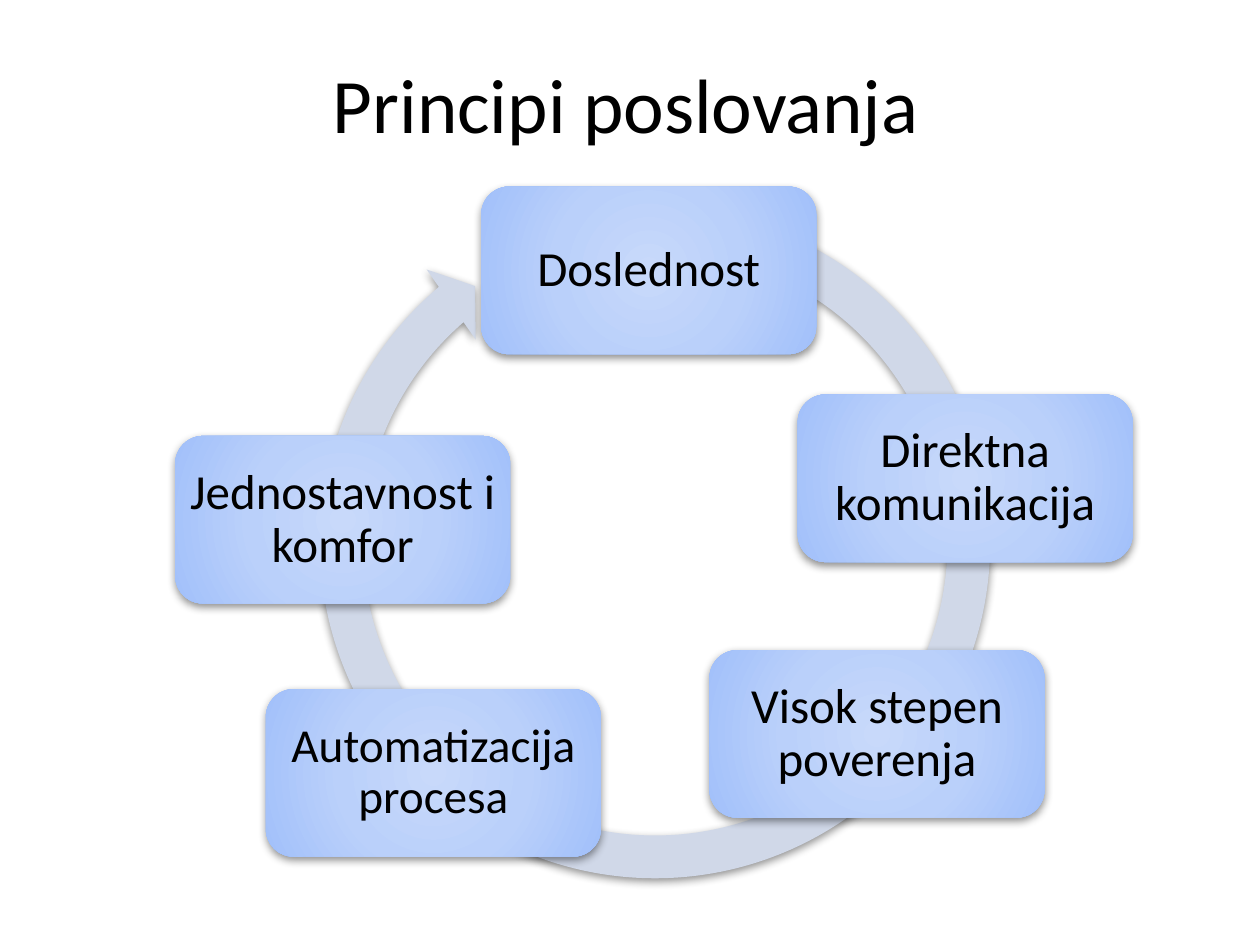
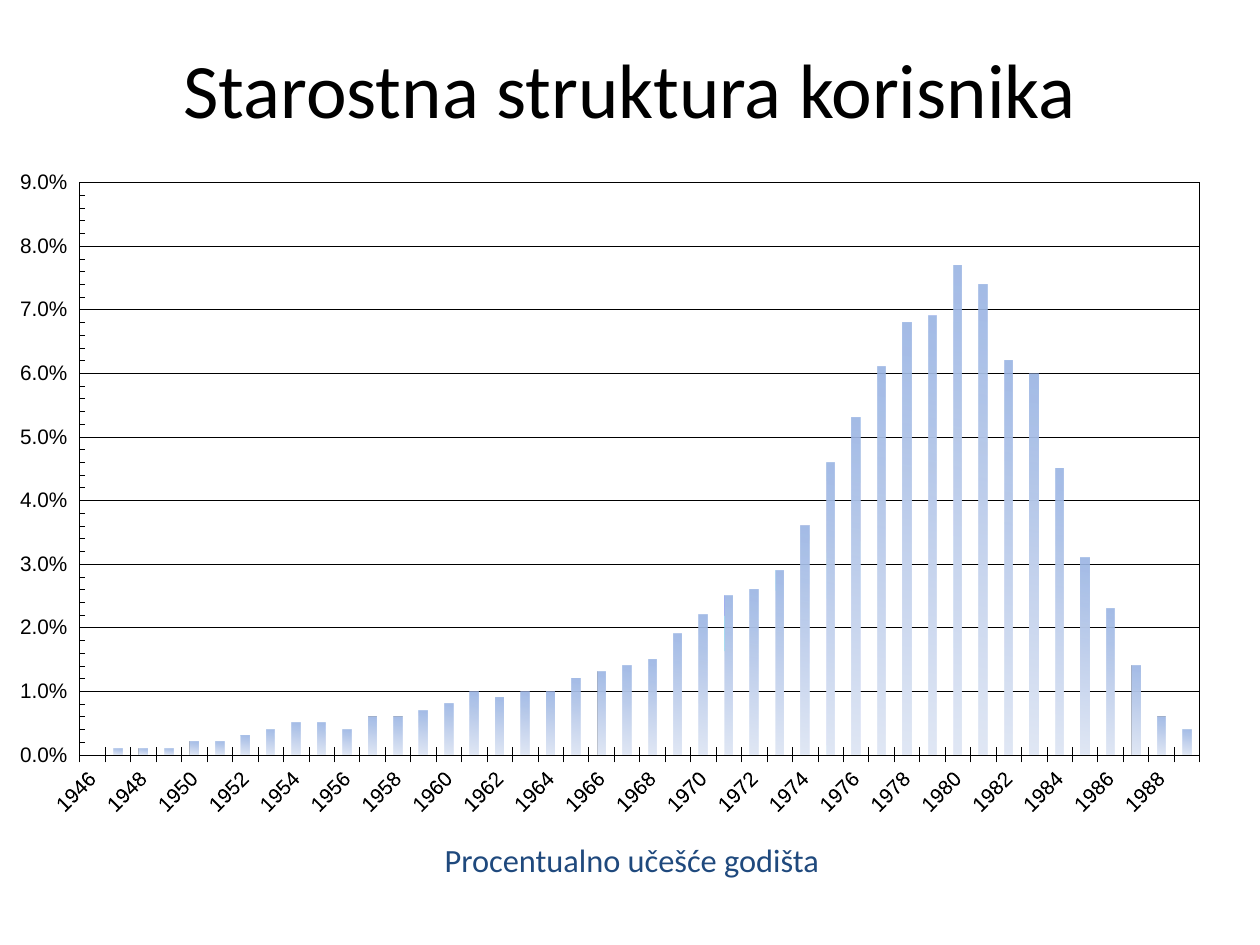
from dataclasses import dataclass

from pptx import Presentation
from pptx.chart.data import CategoryChartData
from pptx.dml.color import RGBColor
from pptx.enum.chart import XL_AXIS_CROSSES, XL_CHART_TYPE, XL_TICK_LABEL_POSITION, XL_TICK_MARK
from pptx.enum.shapes import MSO_SHAPE
from pptx.enum.text import MSO_ANCHOR, MSO_AUTO_SIZE, PP_ALIGN
from pptx.oxml import parse_xml
from pptx.oxml.ns import nsdecls, qn
from pptx.util import Pt

COLUMNS = XL_CHART_TYPE.COLUMN_CLUSTERED
AXIS_AT_MAXIMUM = XL_AXIS_CROSSES.MAXIMUM
LABELS_LOW = XL_TICK_LABEL_POSITION.LOW
TICK_CROSS, TICK_INSIDE = XL_TICK_MARK.CROSS, XL_TICK_MARK.INSIDE
ROUNDED, CIRCULAR_ARROW = MSO_SHAPE.ROUNDED_RECTANGLE, MSO_SHAPE.CIRCULAR_ARROW
TOP, MIDDLE = MSO_ANCHOR.TOP, MSO_ANCHOR.MIDDLE
CENTER = PP_ALIGN.CENTER
NO_AUTOFIT = MSO_AUTO_SIZE.NONE

BLACK, NAVY, RING = "000000", "1F497D", "D0D8E8"
TEXT_FONT, CHART_FONT = "Calibri", "Arial"
TITLE_ONLY = 5
HAIRLINE = 0.25

NODE_STOPS = [(0, "C8D9FA", 100), (50, "BAD0FA", 100), (97, "A3C1FA", 100), (100, "99BCFD", 100)]
NODE_DIRECTION = '<a:path path="circle"><a:fillToRect l="50000" t="50000" r="50000" b="50000"/></a:path>'
BAR_STOPS = [(0, "9AB5E4", 90), (50, "C2D1ED", 100), (100, "E1E8F5", 100)]
BAR_DIRECTION = '<a:lin ang="6000000" scaled="0"/>'


@dataclass(frozen=True)
class Box:
    left: float
    top: float
    width: float
    height: float

    def lengths(self) -> tuple:
        return Pt(self.left), Pt(self.top), Pt(self.width), Pt(self.height)


@dataclass(frozen=True)
class Principle:
    text: str
    left: float
    top: float
    size: float = 28


NODE_WIDTH, NODE_HEIGHT = 191.5, 95.8
RING_BOX = Box(170.6, 106.6, 407.5, 407.5)
RING_ADJUSTMENTS = (0.06, 3.31, 137.69, 173.9, 0.06)
PRINCIPLES = [
    Principle("Doslednost", 275, 106.6),
    Principle("Direktna komunikacija", 455.8, 225.4),
    Principle("Visok stepen poverenja", 405.4, 371.5),
    Principle("Automatizacija procesa", 151.9, 393.8, 27),
    Principle("Jednostavnost i komfor", 100.1, 249.1),
]

FIRST_YEAR = 1946
SHARES = [
    0, 0.001, 0.001, 0.001, 0.002, 0.002, 0.003, 0.004, 0.005, 0.005, 0.004,
    0.006, 0.006, 0.007, 0.008, 0.01, 0.009, 0.01, 0.01, 0.012, 0.013, 0.014,
    0.015, 0.019, 0.022, 0.025, 0.026, 0.029, 0.036, 0.046, 0.053, 0.061,
    0.068, 0.069, 0.077, 0.074, 0.062, 0.06, 0.045, 0.031, 0.023, 0.014,
    0.006, 0.004,
]
PLOT_LAYOUT = {"x": 0.038, "y": 0.077, "w": 0.944, "h": 0.814}


def rgb(hex_color: str) -> RGBColor:
    return RGBColor.from_string(hex_color)


def apply_format(target, values: dict) -> None:
    for name, value in values.items():
        setattr(target, name, value)


def style_font(font, name: str, size: float, color: str) -> None:
    apply_format(font, {"name": name, "size": Pt(size)})
    font.color.rgb = rgb(color)


def style_line(line) -> None:
    line.width = Pt(HAIRLINE)
    line.color.rgb = rgb(BLACK)


def fill_gradient(fill, element, stops: list, direction: str) -> None:
    fill.gradient()
    placed = element.find(".//" + qn("a:gradFill"))
    stop_xml = "".join(
        f'<a:gs pos="{position * 1000}"><a:srgbClr val="{color}">'
        f'<a:alpha val="{opacity * 1000}"/></a:srgbClr></a:gs>'
        for position, color, opacity in stops
    )
    gradient = parse_xml(
        f'<a:gradFill {nsdecls("a")} rotWithShape="1"><a:gsLst>{stop_xml}</a:gsLst>{direction}</a:gradFill>'
    )
    placed.getparent().replace(placed, gradient)


def add_soft_shadow(shape) -> None:
    shape.shadow.inherit = False
    effects = shape._element.spPr.find(qn("a:effectLst"))
    effects.append(parse_xml(
        f'<a:outerShdw {nsdecls("a")} blurRad="{Pt(5)}" dist="{Pt(2)}" dir="5400000" rotWithShape="0">'
        f'<a:srgbClr val="{BLACK}"><a:alpha val="43000"/></a:srgbClr></a:outerShdw>'
    ))


def write_text(shape, text: str, size: float, color: str = BLACK, anchor=MIDDLE, **paragraph_values) -> None:
    frame = shape.text_frame
    apply_format(frame, {"word_wrap": True, "auto_size": NO_AUTOFIT, "vertical_anchor": anchor})
    paragraph = frame.paragraphs[0]
    apply_format(paragraph, {"text": text, "alignment": CENTER, **paragraph_values})
    style_font(paragraph.runs[0].font, TEXT_FONT, size, color)


def add_titled_slide(presentation, title: str, box: Box):
    slide = presentation.slides.add_slide(presentation.slide_layouts[TITLE_ONLY])
    shape = slide.shapes.title
    shape.left, shape.top, shape.width, shape.height = box.lengths()
    write_text(shape, title, 44)
    return slide


def add_cycle_shape(slide, kind, box: Box):
    shape = slide.shapes.add_shape(kind, *box.lengths())
    shape.line.fill.background()
    add_soft_shadow(shape)
    return shape


def add_ring(slide) -> None:
    ring = add_cycle_shape(slide, CIRCULAR_ARROW, RING_BOX)
    for index, value in enumerate(RING_ADJUSTMENTS):
        ring.adjustments[index] = value
    ring.fill.solid()
    ring.fill.fore_color.rgb = rgb(RING)


def add_principle(slide, principle: Principle) -> None:
    node = add_cycle_shape(slide, ROUNDED, Box(principle.left, principle.top, NODE_WIDTH, NODE_HEIGHT))
    fill_gradient(node.fill, node._element, NODE_STOPS, NODE_DIRECTION)
    margins = ("margin_left", "margin_top", "margin_right", "margin_bottom")
    apply_format(node.text_frame, dict.fromkeys(margins, Pt(3)))
    write_text(node, principle.text, principle.size, line_spacing=0.9)


def set_plot_area(chart) -> None:
    plot_area = chart._chartSpace.chart.plotArea
    for layout in plot_area.findall(qn("c:layout")):
        plot_area.remove(layout)
    modes = '<c:xMode val="edge"/><c:yMode val="edge"/>'
    sizes = "".join(f'<c:{name} val="{value}"/>' for name, value in PLOT_LAYOUT.items())
    plot_area.insert(0, parse_xml(
        f'<c:layout {nsdecls("c")}><c:manualLayout><c:layoutTarget val="inner"/>'
        f"{modes}{sizes}</c:manualLayout></c:layout>"
    ))
    plot_area.append(parse_xml(
        f'<c:spPr {nsdecls("c", "a")}><a:noFill/><a:ln w="{Pt(HAIRLINE)}"><a:solidFill>'
        f'<a:srgbClr val="{BLACK}"/></a:solidFill></a:ln></c:spPr>'
    ))


def style_axes(chart) -> None:
    years, shares = chart.category_axis, chart.value_axis
    apply_format(years, {
        "major_tick_mark": TICK_CROSS,
        "crosses": AXIS_AT_MAXIMUM,
        "has_major_gridlines": False,
    })
    apply_format(shares, {
        "minimum_scale": 0,
        "maximum_scale": 0.09,
        "major_unit": 0.01,
        "minor_unit": 0.002,
        "major_tick_mark": TICK_INSIDE,
        "minor_tick_mark": TICK_INSIDE,
        "tick_label_position": LABELS_LOW,
        "has_major_gridlines": True,
    })
    apply_format(shares.tick_labels, {
        "number_format": r"#,##0.0%;[Red]\-#,##0.00",
        "number_format_is_linked": False,
    })
    for axis in (years, shares):
        style_font(axis.tick_labels.font, CHART_FONT, 12, BLACK)
        style_line(axis.format.line)
    style_line(shares.major_gridlines.format.line)
    years._element.find(".//" + qn("a:bodyPr")).set("rot", "-2700000")
    label_skip = parse_xml(f'<c:tickLblSkip {nsdecls("c")} val="2"/>')
    years._element.find(qn("c:noMultiLvlLbl")).addprevious(label_skip)


def add_age_chart(slide, box: Box) -> None:
    data = CategoryChartData(number_format="0.0%")
    data.categories = [str(FIRST_YEAR + offset) for offset in range(len(SHARES))]
    data.add_series("Series 1", SHARES)
    chart = slide.shapes.add_chart(COLUMNS, *box.lengths(), data).chart
    apply_format(chart, {"has_title": False, "has_legend": False})
    style_font(chart.font, CHART_FONT, 12, BLACK)
    plot = chart.plots[0]
    apply_format(plot, {"gap_width": 204, "vary_by_categories": False})
    series = plot.series[0]
    fill_gradient(series.format.fill, series._element, BAR_STOPS, BAR_DIRECTION)
    style_axes(chart)
    set_plot_area(chart)


def build_principles(presentation) -> None:
    slide = add_titled_slide(presentation, "Principi poslovanja", Box(33.8, 16.6, 648, 84.2))
    add_ring(slide)
    for principle in PRINCIPLES:
        add_principle(slide, principle)


def build_age_structure(presentation) -> None:
    slide = add_titled_slide(presentation, "Starostna struktura korisnika", Box(36, 21.6, 648, 56.9))
    caption = slide.shapes.add_textbox(*Box(36, 476.4, 650, 30).lengths())
    write_text(caption, "Procentualno učešće godišta", 18.5, NAVY, TOP)
    add_age_chart(slide, Box(11.5, 73.4, 686.2, 401.8))


def main() -> None:
    presentation = Presentation()
    apply_format(presentation, {"slide_width": Pt(720), "slide_height": Pt(540)})
    build_principles(presentation)
    build_age_structure(presentation)
    presentation.save("out.pptx")


if __name__ == "__main__":
    main()
